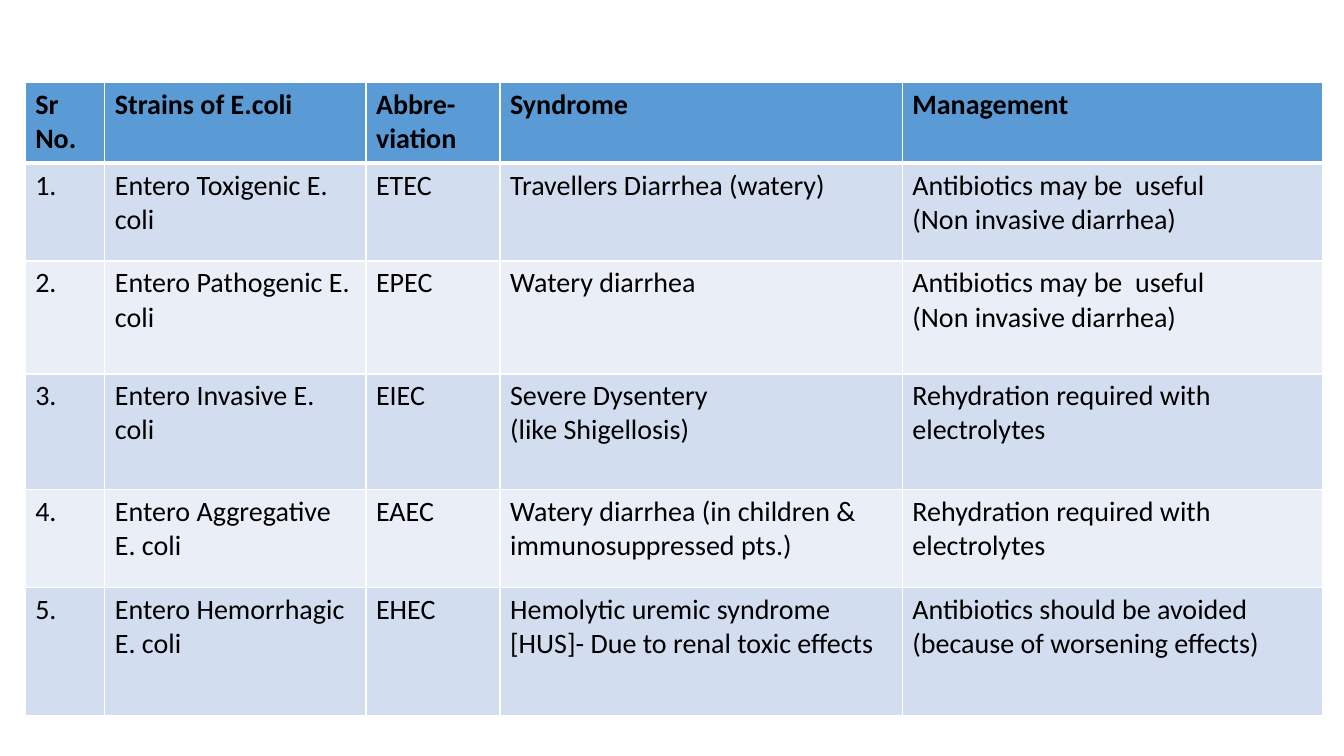
import pptx
import pptx.dml.color
import pptx.oxml
import pptx.oxml.ns
import pptx.util

Inches = pptx.util.Inches
Pt = pptx.util.Pt
RGBColor = pptx.dml.color.RGBColor

HEADER = ("Sr No.", "Strains of E.coli", "Abbre-viation", "Syndrome", "Management")
STRAINS = [
    ("Entero Toxigenic E. coli", "ETEC", "Travellers Diarrhea (watery)",
     "Antibiotics may be  useful\n(Non invasive diarrhea)"),
    ("Entero Pathogenic E. coli", "EPEC", "Watery diarrhea",
     "Antibiotics may be  useful\n(Non invasive diarrhea)"),
    ("Entero Invasive E. coli", "EIEC", "Severe Dysentery\n(like Shigellosis)",
     "Rehydration required with electrolytes"),
    ("Entero Aggregative E. coli", "EAEC",
     "Watery diarrhea (in children & immunosuppressed pts.)",
     "Rehydration required with electrolytes"),
    ("Entero Hemorrhagic E. coli", "EHEC",
     "Hemolytic uremic syndrome\n[HUS]- Due to renal toxic effects",
     "Antibiotics should be avoided (because of worsening effects)"),
]
COLUMN_WIDTHS = (0.79, 2.59, 1.33, 3.99, 4.17)
ROW_HEIGHTS = (0.8, 0.97, 1.12, 1.15, 0.97, 1.27)
TABLE_LEFT, TABLE_TOP = 0.25, 0.82

BLACK = RGBColor(0x00, 0x00, 0x00)
WHITE = RGBColor(0xFF, 0xFF, 0xFF)
HEADER_BLUE = RGBColor(0x5B, 0x9B, 0xD5)
BAND_DARK = RGBColor(0xD2, 0xDE, 0xEF)
BAND_LIGHT = RGBColor(0xEA, 0xEF, 0xF7)


def write_text(text_frame, text, size=20, font="Calibri", color=BLACK, bold=False):
    text_frame.text = text
    for paragraph in text_frame.paragraphs:
        paragraph.font.size = Pt(size)
        paragraph.font.name = font
        paragraph.font.color.rgb = color
        paragraph.font.bold = bold


def set_borders(cell, left=1, right=1, top=1, bottom=1, color=WHITE):
    """Draw the four cell borders with widths in points; call before filling."""
    properties = cell._tc.get_or_add_tcPr()
    for side, width in (("L", left), ("R", right), ("T", top), ("B", bottom)):
        properties.append(pptx.oxml.parse_xml(
            f'<a:ln{side} {pptx.oxml.ns.nsdecls("a")} w="{Pt(width)}">'
            f'<a:solidFill><a:srgbClr val="{color}"/></a:solidFill></a:ln{side}>'))


def row_fill(row):
    if row == 0:
        return HEADER_BLUE
    return BAND_DARK if row % 2 else BAND_LIGHT


def add_strain_table(slide):
    rows = [HEADER] + [(f"{number}.", *strain) for number, strain in enumerate(STRAINS, 1)]
    table = slide.shapes.add_table(
        len(rows), len(HEADER), Inches(TABLE_LEFT), Inches(TABLE_TOP),
        Inches(sum(COLUMN_WIDTHS)), Inches(sum(ROW_HEIGHTS))).table
    table.horz_banding = False
    for column, width in zip(table.columns, COLUMN_WIDTHS):
        column.width = Inches(width)
    for row, height in zip(table.rows, ROW_HEIGHTS):
        row.height = Inches(height)

    for row, texts in enumerate(rows):
        for column, text in enumerate(texts):
            cell = table.cell(row, column)
            set_borders(cell, top=3 if row == 1 else 1, bottom=3 if row == 0 else 1)
            cell.fill.solid()
            cell.fill.fore_color.rgb = row_fill(row)
            write_text(cell.text_frame, text, bold=row == 0)


def main():
    presentation = pptx.Presentation()
    presentation.slide_width = Inches(13.33)
    presentation.slide_height = Inches(7.5)
    blank_layout = presentation.slide_layouts[6]
    add_strain_table(presentation.slides.add_slide(blank_layout))
    presentation.save("out.pptx")


if __name__ == "__main__":
    main()
